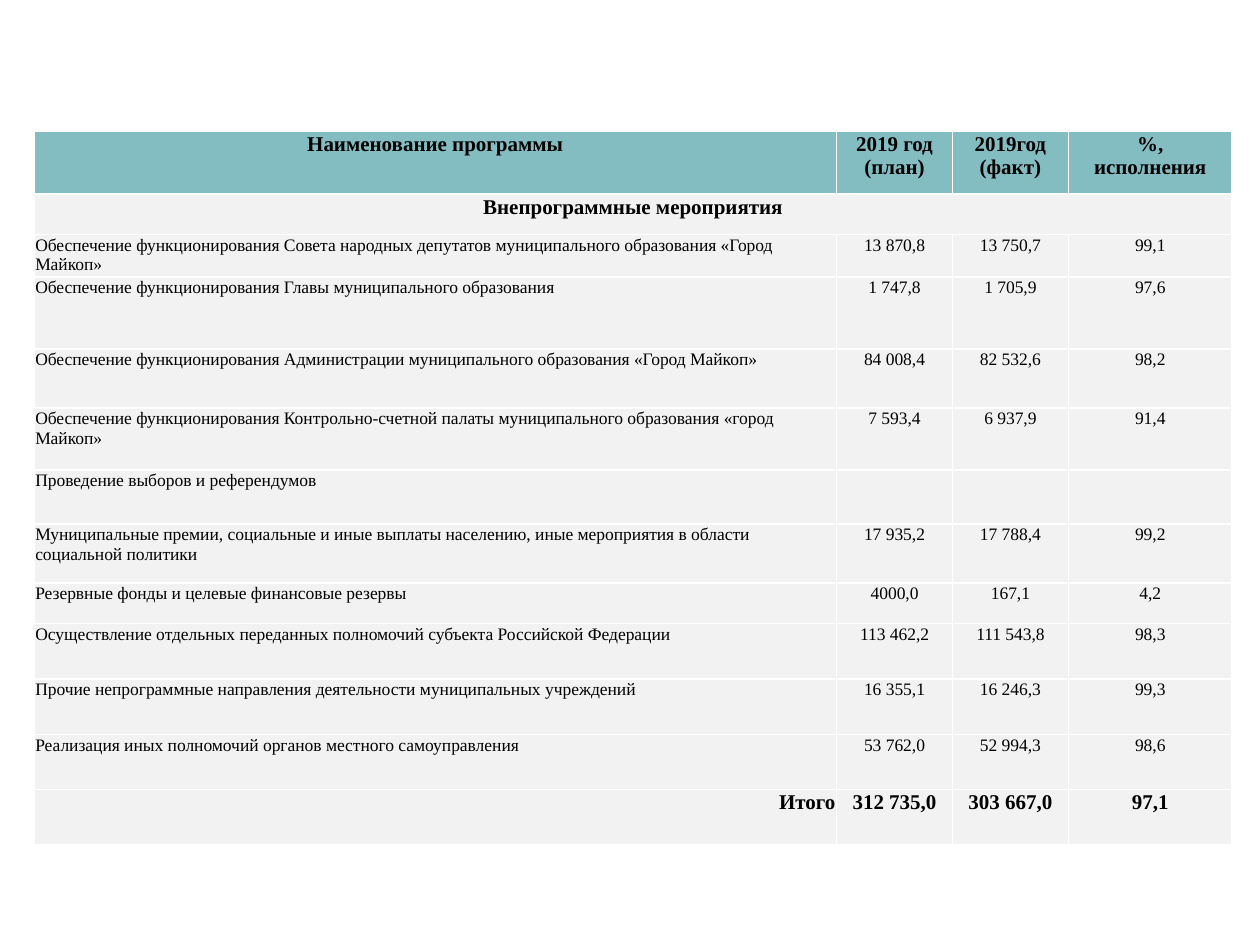
from copy import deepcopy

from lxml import etree
from pptx import Presentation
from pptx.dml.color import RGBColor
from pptx.enum.text import PP_ALIGN
from pptx.oxml.ns import qn
from pptx.util import Inches, Pt

LEFT, MID, RIGHT = PP_ALIGN.LEFT, PP_ALIGN.CENTER, PP_ALIGN.RIGHT
FONT = "Times New Roman"
HEAD, BODY, LINE, INK = "83BCC1", "F2F2F2", "FFFFFF", "000000"
COLS = [6.37, 0.92, 0.92, 1.3]
HEIGHTS = [0.5, 0.32, 0.34, 0.57, 0.47, 0.49, 0.43,
           0.47, 0.32, 0.44, 0.44, 0.44, 0.44]
ROWS = [
    ("Наименование программы", "2019 год\v(план)", "2019год\v(факт)",
     "%,\vисполнения"),
    ("Внепрограммные мероприятия", "", "", ""),
    ("Обеспечение функционирования Совета народных депутатов "
     "муниципального образования «Город Майкоп»",
     "13 870,8", "13 750,7", "99,1"),
    ("Обеспечение функционирования Главы муниципального образования",
     "1 747,8", "1 705,9", "97,6"),
    ("Обеспечение функционирования Администрации муниципального "
     "образования «Город Майкоп»", "84 008,4", "82 532,6", "98,2"),
    ("Обеспечение функционирования Контрольно-счетной палаты "
     "муниципального образования «город Майкоп»",
     "7 593,4", "6 937,9", "91,4"),
    ("Проведение выборов и референдумов", "", "", ""),
    ("Муниципальные премии, социальные и иные выплаты населению, иные "
     "мероприятия в области социальной политики",
     "17 935,2", "17 788,4", "99,2"),
    ("Резервные фонды и целевые финансовые резервы",
     "4000,0", "167,1", "4,2"),
    ("Осуществление отдельных переданных полномочий субъекта "
     "Российской Федерации", "113 462,2", "111 543,8", "98,3"),
    ("Прочие непрограммные направления деятельности муниципальных "
     "учреждений", "16 355,1", "16 246,3", "99,3"),
    ("Реализация иных полномочий органов местного самоуправления",
     "53 762,0", "52 994,3", "98,6"),
    ("Итого", "312 735,0", "303 667,0", "97,1"),
]
LAST = len(ROWS) - 1


def color(code):
    return RGBColor.from_string(code)


def set_edges(cell):
    """Draw thin lines on all four sides of a cell."""
    props = cell._tc.get_or_add_tcPr()
    for spot, side in enumerate(("a:lnL", "a:lnR", "a:lnT", "a:lnB")):
        edge = etree.Element(qn(side), w=str(Pt(1)))
        fill = etree.SubElement(edge, qn("a:solidFill"))
        etree.SubElement(fill, qn("a:srgbClr"), val=LINE)
        props.insert(spot, edge)


def set_text(cell, text, align, size, bold):
    cell.margin_left = cell.margin_right = cell.margin_top = Inches(0.01)
    cell.margin_bottom = 0
    para = cell.text_frame.paragraphs[0]
    para.text = text
    para.alignment = align
    for run in para.runs:
        font = run.font
        font.name, font.size, font.bold = FONT, Pt(size), bold
        font.color.rgb = color(INK)
    # Line breaks take the size of the text around them
    for gap in para._p.findall(qn("a:br")):
        gap.insert(0, deepcopy(para.runs[0]._r.rPr))


def get_align(row, col):
    if col or row < 2:
        return MID
    return RIGHT if row == LAST else LEFT


def add_table(slide):
    frame = slide.shapes.add_table(
        len(ROWS), len(COLS), Inches(0.27), Inches(1.04),
        Inches(sum(COLS)), Inches(sum(HEIGHTS)))
    table = frame.table
    for col, width in zip(table.columns, COLS):
        col.width = Inches(width)
    for row, height in zip(table.rows, HEIGHTS):
        row.height = Inches(height)
    table.cell(1, 0).merge(table.cell(1, len(COLS) - 1))
    for i, texts in enumerate(ROWS):
        bold = i in (0, 1, LAST)
        for j, text in enumerate(texts):
            cell = table.cell(i, j)
            cell.fill.solid()
            cell.fill.fore_color.rgb = color(BODY if i else HEAD)
            set_edges(cell)
            if text:
                set_text(cell, text, get_align(i, j), 12 if bold else 10, bold)


def main():
    deck = Presentation()
    deck.slide_width, deck.slide_height = Inches(10), Inches(7.5)
    slide = deck.slides.add_slide(deck.slide_layouts[6])
    add_table(slide)
    deck.save("out.pptx")


if __name__ == "__main__":
    main()
